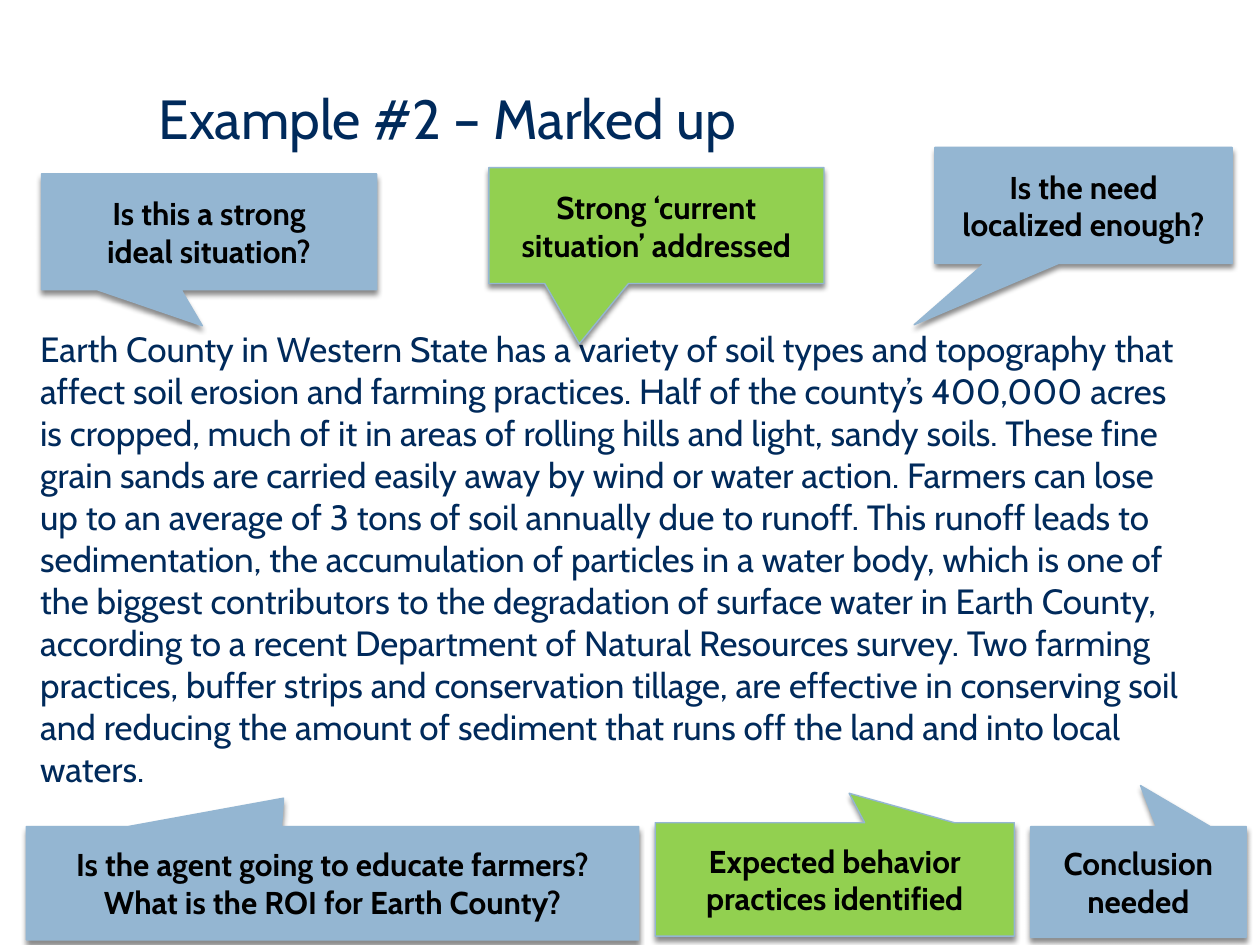
from lxml.etree import SubElement
from pptx import Presentation
from pptx.dml.color import RGBColor
from pptx.enum.shapes import MSO_SHAPE
from pptx.enum.text import MSO_ANCHOR, PP_ALIGN
from pptx.oxml.ns import qn
from pptx.util import Inches, Pt

NAVY, BLUE, GREEN, BLACK = "002A5B", "94B6D2", "92D050", "000000"

BODY = (
    "Earth County in Western State has a variety of soil types and topography "
    "that affect soil erosion and farming practices. Half of the county’s 400,000 "
    "acres is cropped, much of it in areas of rolling hills and light, sandy soils. "
    "These fine grain sands are carried easily away by wind or water action. "
    "Farmers can lose up to an average of 3 tons of soil annually due to runoff. "
    "This runoff leads to sedimentation, the accumulation of particles in a water "
    "body, which is one of the biggest contributors to the degradation of surface "
    "water in Earth County, according to a recent Department of Natural Resources "
    "survey. Two farming practices, buffer strips and conservation tillage, are "
    "effective in conserving soil and reducing the amount of sediment that runs "
    "off the land and into local waters."
)

# Lines of text, box (left, top, width, height), pointer tip (x, y), fill
BACK_CALLOUTS = [
    (["Is this a strong", "ideal situation?"], (0.33, 1.38, 2.66, 0.92), (-0.02, 0.81), BLUE),
    (["Is the need localized enough?"], (7.42, 1.17, 2.36, 0.92), (-0.57, 1.03), BLUE),
]
FRONT_CALLOUTS = [
    (["Strong ‘current situation’ addressed"], (3.88, 1.33, 2.66, 0.92), (-0.23, 1.02), GREEN),
    (["Expected behavior practices identified"], (5.2, 6.53, 2.85, 0.9), (0.04, -0.76), GREEN),
    (["Is the agent going to educate farmers?", "What is the ROI for Earth County?"],
     (0.21, 6.56, 4.86, 0.9), (-0.08, -0.75), BLUE),
    (["Conclusion needed"], (8.18, 6.56, 1.71, 0.88), (0.01, -0.87), BLUE),
]


def color(value):
    return RGBColor.from_string(value)


class SlideBuilder:
    font = "Cabin"

    def __init__(self, prs):
        self.slide = prs.slides.add_slide(prs.slide_layouts[6])

    def set_text(self, sp, lines, size, text_color, anchor, align=PP_ALIGN.LEFT, bold=False):
        tf = sp.text_frame
        tf.word_wrap = True
        tf.vertical_anchor = anchor
        for i, line in enumerate(lines):
            p = tf.add_paragraph() if i else tf.paragraphs[0]
            p.text = line
            p.alignment = align
            p.font.name = self.font
            p.font.size = Pt(size)
            p.font.bold = bold
            p.font.color.rgb = color(text_color)

    def text(self, text, box, size, anchor):
        sp = self.slide.shapes.add_textbox(*map(Inches, box))
        self.set_text(sp, [text], size, NAVY, anchor)

    def callout(self, lines, box, tip, fill):
        sp = self.slide.shapes.add_shape(MSO_SHAPE.RECTANGULAR_CALLOUT, *map(Inches, box))
        sp.adjustments[0], sp.adjustments[1] = tip
        sp.fill.solid()
        sp.fill.fore_color.rgb = color(fill)
        sp.line.color.rgb = color(BLUE)
        sp.line.width = Pt(0.79)
        self.drop_shadow(sp)
        self.set_text(sp, lines, 18, BLACK, MSO_ANCHOR.MIDDLE, PP_ALIGN.CENTER, True)

    def drop_shadow(self, sp):
        sp.shadow.inherit = False
        effects = sp._element.spPr.find(qn("a:effectLst"))
        shadow = SubElement(effects, qn("a:outerShdw"), blurRad=str(Pt(3)),
                            dist=str(Pt(2.4)), dir="5400000", rotWithShape="0")
        shade = SubElement(shadow, qn("a:srgbClr"), val=BLACK)
        SubElement(shade, qn("a:alpha"), val="45000")


def main():
    prs = Presentation()
    prs.slide_width, prs.slide_height = Inches(10), Inches(7.5)
    s = SlideBuilder(prs)

    # Title
    s.text("Example #2 – Marked up", (1.16, 0.25, 8.42, 1.36), 31.5, MSO_ANCHOR.MIDDLE)

    # Example paragraph between the callouts behind and in front of it
    for callout in BACK_CALLOUTS:
        s.callout(*callout)
    s.text(BODY, (0.22, 2.55, 9.37, 4.12), 20, MSO_ANCHOR.TOP)
    for callout in FRONT_CALLOUTS:
        s.callout(*callout)

    prs.save("out.pptx")


if __name__ == "__main__":
    main()
